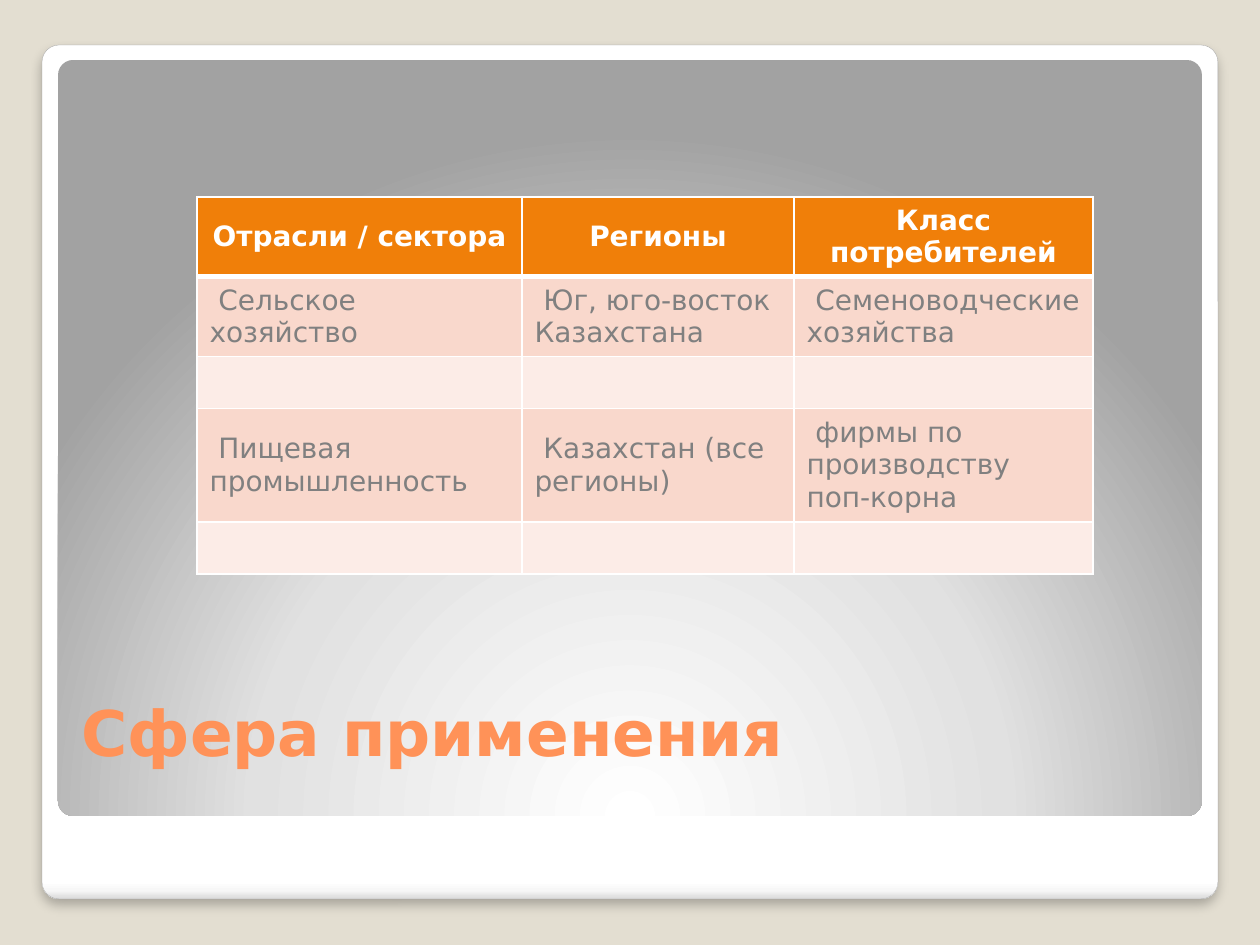
from lxml import etree
from pptx import Presentation, util as u
from pptx.dml.color import RGBColor
from pptx.enum import shapes, text
from pptx.oxml.ns import qn

PX = 914400 // 126
COLORS = {
    "backdrop": "E3DED1", "white": "FFFFFF", "edge": "A4A4A4", "shadow": "000000",
    "title": "FF9258", "header": "F07F09", "body": "808080",
    "band": "F9D8CC", "light_band": "FCECE7",
}


def rgb(name):
    return RGBColor.from_string(COLORS[name])


def sub(parent, tag, **attributes):
    return etree.SubElement(parent, qn(tag), {k: str(v) for k, v in attributes.items()})


def write(frame, content, size, color, bold=False, align=text.PP_ALIGN.LEFT,
          anchor=text.MSO_ANCHOR.MIDDLE, font="DejaVu Sans"):
    frame.word_wrap = True
    frame.vertical_anchor = anchor
    paragraph = frame.paragraphs[0]
    paragraph.alignment = align
    run = paragraph.add_run()
    run.text = content
    run.font.name, run.font.size, run.font.bold = font, u.Pt(size), bold
    run.font.color.rgb = rgb(color)


class SlideBuilder:
    def __init__(self, slide):
        self.slide = slide
        slide.background.fill.solid()
        slide.background.fill.fore_color.rgb = rgb("backdrop")

    def panel(self, box, stops, radial=None, edge=None, shadow=False):
        """Rounded panel with a gradient, downward unless radial gives its focus."""
        panel = self.slide.shapes.add_shape(
            shapes.MSO_SHAPE.ROUNDED_RECTANGLE, *(v * PX for v in box))
        panel.adjustments[0] = 0.02
        panel.shadow.inherit = False
        panel.fill.gradient()
        properties = panel._element.spPr
        gradient = properties.find(qn("a:gradFill"))
        for child in list(gradient):
            gradient.remove(child)
        stop_list = sub(gradient, "a:gsLst")
        for position, color in stops:
            sub(sub(stop_list, "a:gs", pos=position * 1000), "a:srgbClr", val=color)
        if radial:
            sub(sub(gradient, "a:path", path="circle"), "a:fillToRect",
                **{side: value * 1000 for side, value in radial.items()})
        else:
            sub(gradient, "a:lin", ang=5400000, scaled=0)
        if edge:
            panel.line.color.rgb = rgb(edge)
            panel.line.width = u.Pt(0.16)
        else:
            panel.line.fill.background()
        if shadow:
            outer = sub(properties.find(qn("a:effectLst")), "a:outerShdw",
                        blurRad=u.Pt(6), dist=u.Pt(4), dir=5400000, rotWithShape=0)
            sub(sub(outer, "a:srgbClr", val=COLORS["shadow"]), "a:alpha", val=25000)

    def label(self, box, content, **style):
        frame = self.slide.shapes.add_textbox(*(v * PX for v in box)).text_frame
        write(frame, content, **style)

    def borders(self, cell, **widths):
        properties = cell._tc.get_or_add_tcPr()
        for index, side in enumerate("LRTB"):
            line = sub(properties, f"a:ln{side}", w=u.Pt(widths.get(side, 1)))
            sub(sub(line, "a:solidFill"), "a:srgbClr", val=COLORS["white"])
            properties.insert(index, line)

    def table(self, left, top, widths, heights, rows):
        table = self.slide.shapes.add_table(
            len(rows), len(widths), left * PX, top * PX,
            sum(widths) * PX, sum(heights) * PX).table
        for column, width in zip(table.columns, widths):
            column.width = width * PX
        for r, (height, row) in enumerate(zip(heights, rows)):
            table.rows[r].height = height * PX
            header = r == 0
            fill = "header" if header else "band" if r % 2 else "light_band"
            for c, content in enumerate(row):
                cell = table.cell(r, c)
                cell.fill.solid()
                cell.fill.fore_color.rgb = rgb(fill)
                self.borders(cell, **({"B": 3} if header else {"T": 3} if r == 1 else {}))
                cell.vertical_anchor = text.MSO_ANCHOR.MIDDLE
                if content:
                    write(cell.text_frame, content, size=16, bold=header,
                          color="white" if header else "body",
                          align=text.PP_ALIGN.CENTER if header else text.PP_ALIGN.LEFT)


def main():
    deck = Presentation()
    deck.slide_width, deck.slide_height = u.Inches(10), u.Inches(7.5)
    builder = SlideBuilder(deck.slides.add_slide(deck.slide_layouts[6]))

    # Framed backdrop
    builder.panel((42, 45, 1176, 854),
                  [(0, "FFFFFF"), (98, "FFFFFF"), (99, "F7F7F7"), (100, "DADADA")],
                  edge="edge", shadow=True)
    builder.panel((58, 60, 1144, 756),
                  [(0, "FFFFFF"), (55, "E1E1E1"), (100, "A2A2A2")],
                  radial={"l": 50, "t": 175, "r": 50, "b": -75})

    # Title
    builder.label((69, 630, 1128, 145), "Сфера применения", size=36, color="title",
                  bold=True, anchor=text.MSO_ANCHOR.BOTTOM)

    # Fields of use
    blank = ("", "", "")
    builder.table(197, 197, (325, 272, 299), (77, 77, 52, 110, 52), [
        ("Отрасли / сектора", "Регионы", "Класс потребителей"),
        (" Сельское хозяйство", " Юг, юго-восток Казахстана", " Семеноводческие хозяйства"),
        blank,
        (" Пищевая промышленность", " Казахстан (все регионы)",
         " фирмы по производству поп-корна"),
        blank,
    ])

    deck.save("out.pptx")


if __name__ == "__main__":
    main()
